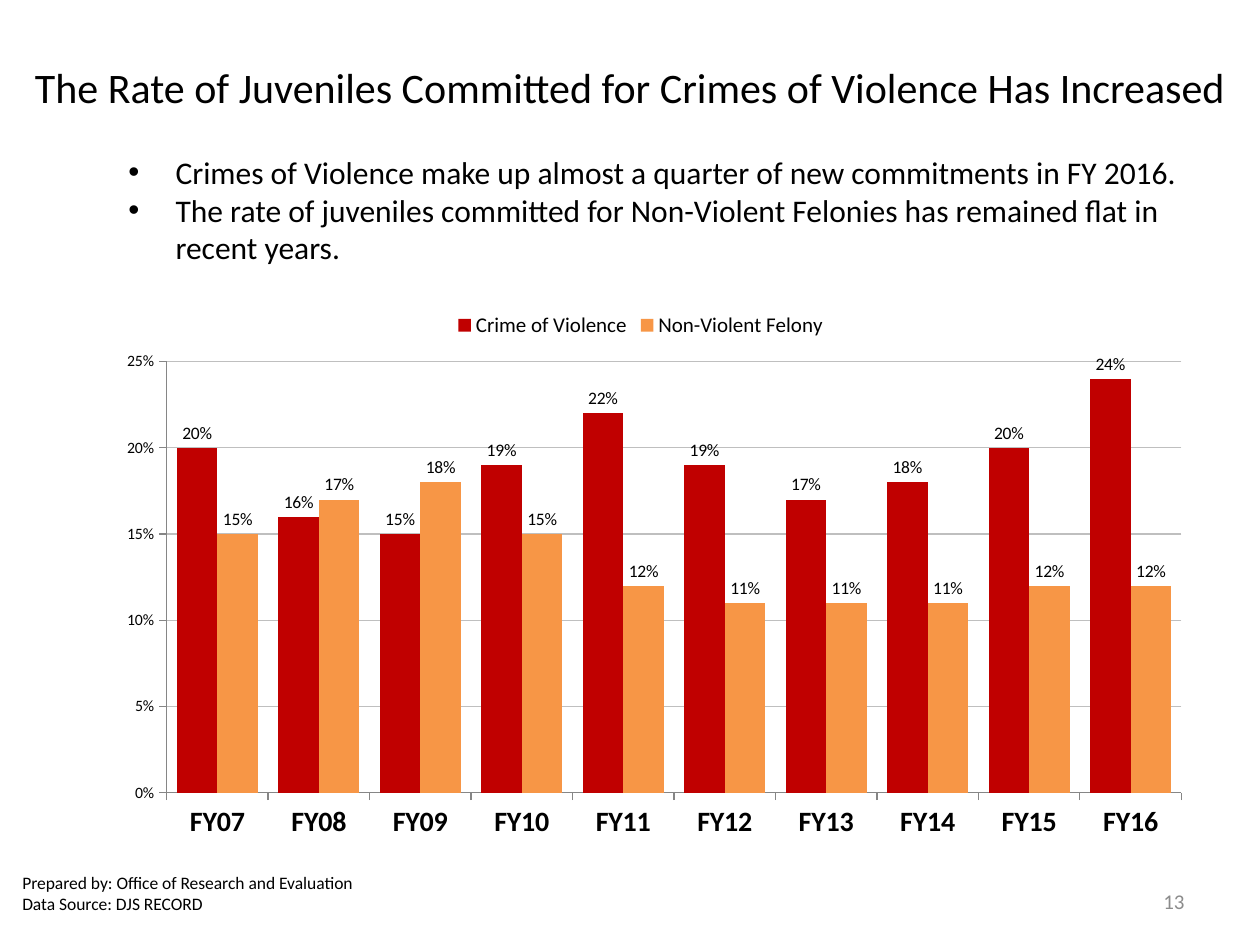
from lxml import etree
from pptx import Presentation
from pptx.chart.data import CategoryChartData
from pptx.dml.color import RGBColor
from pptx.enum.chart import (XL_CHART_TYPE, XL_LABEL_POSITION,
                             XL_LEGEND_POSITION, XL_TICK_MARK)
from pptx.enum.text import MSO_ANCHOR, PP_ALIGN
from pptx.oxml.ns import qn
from pptx.util import Cm, Pt

COLUMN = XL_CHART_TYPE.COLUMN_CLUSTERED
OUT_END = XL_LABEL_POSITION.OUTSIDE_END
TOP = XL_LEGEND_POSITION.TOP
OUT, NONE = XL_TICK_MARK.OUTSIDE, XL_TICK_MARK.NONE
MIDDLE = MSO_ANCHOR.MIDDLE
LEFT, CENTER, RIGHT = PP_ALIGN.LEFT, PP_ALIGN.CENTER, PP_ALIGN.RIGHT

BLACK = RGBColor(0, 0, 0)
GRAY = RGBColor(0x8C, 0x8C, 0x8C)
AXIS = RGBColor(0x86, 0x86, 0x86)
GRID = RGBColor(0xBF, 0xBF, 0xBF)
RED = RGBColor(0xC0, 0, 0)
ORANGE = RGBColor(0xF7, 0x96, 0x46)

YEARS = [f"FY{year:02d}" for year in range(7, 17)]
RATES = [
    ("Crime of Violence", RED,
     [0.20, 0.16, 0.15, 0.19, 0.22, 0.19, 0.17, 0.18, 0.20, 0.24]),
    ("Non-Violent Felony", ORANGE,
     [0.15, 0.17, 0.18, 0.15, 0.12, 0.11, 0.11, 0.11, 0.12, 0.12]),
]
PLOT = {"x": 0.074, "y": 0.112, "w": 0.912, "h": 0.766}


def put(item, **values):
    for name, value in values.items():
        setattr(item, name, value)


class Deck:
    def __init__(self, face):
        self.face = face
        self.prs = Presentation()
        put(self.prs, slide_width=Cm(25.4), slide_height=Cm(19.05))
        self.slide = self.prs.slides.add_slide(self.prs.slide_layouts[6])

    def style(self, font, size, color=BLACK, bold=False):
        put(font, name=self.face, size=Pt(size), bold=bold)
        font.color.rgb = color

    def text(self, box, lines, size, color=BLACK, align=LEFT, bullet=False):
        frame = self.slide.shapes.add_textbox(*map(Cm, box)).text_frame
        put(frame, word_wrap=True, vertical_anchor=MIDDLE)
        for i, line in enumerate(lines):
            para = frame.add_paragraph() if i else frame.paragraphs[0]
            para.alignment = align
            run = para.add_run()
            run.text = line
            self.style(run.font, size, color)
            if bullet:
                self.bullet(para)

    def bullet(self, para):
        props = para._p.get_or_add_pPr()
        props.set("marL", str(Cm(0.95)))
        props.set("indent", str(-Cm(0.95)))
        etree.SubElement(props, qn("a:buFont")).set("typeface", "Arial")
        etree.SubElement(props, qn("a:buChar")).set("char", "•")

    def chart(self, box, cats, rows):
        data = CategoryChartData(number_format="0%")
        data.categories = cats
        for name, _, vals in rows:
            data.add_series(name, vals)
        chart = self.slide.shapes.add_chart(COLUMN, *map(Cm, box), data).chart
        self.style(chart.font, 10)
        put(chart, has_title=False, has_legend=True)
        put(chart.legend, position=TOP, include_in_layout=False)
        self.style(chart.legend.font, 12)
        plot = chart.plots[0]
        put(plot, gap_width=50, overlap=0, vary_by_categories=False)
        for series, (_, color, _) in zip(plot.series, rows):
            series.format.fill.solid()
            series.format.fill.fore_color.rgb = color
            labels = series.data_labels
            put(labels, show_value=True, position=OUT_END,
                number_format="0%", number_format_is_linked=False)
            self.style(labels.font, 10)
        self.axes(chart)
        self.place(chart)

    def axes(self, chart):
        cat, val = chart.category_axis, chart.value_axis
        for axis, size, bold in ((cat, 16, True), (val, 9, False)):
            put(axis, major_tick_mark=OUT, minor_tick_mark=NONE)
            self.style(axis.tick_labels.font, size, bold=bold)
            self.line(axis.format.line, AXIS)
        put(val, minimum_scale=0, maximum_scale=0.25, major_unit=0.05,
            has_major_gridlines=True)
        put(val.tick_labels, number_format="0%", number_format_is_linked=False)
        self.line(val.major_gridlines.format.line, GRID)

    def line(self, line, color):
        line.color.rgb = color
        line.width = Pt(0.75)

    def place(self, chart):
        """Fix the inner plot area as fractions of the chart."""
        area = chart._chartSpace.chart.plotArea
        for old in area.findall(qn("c:layout")):
            area.remove(old)
        layout = etree.Element(qn("c:layout"))
        manual = etree.SubElement(layout, qn("c:manualLayout"))
        values = {"layoutTarget": "inner", "xMode": "edge", "yMode": "edge",
                  **PLOT}
        for name, value in values.items():
            etree.SubElement(manual, qn(f"c:{name}")).set("val", str(value))
        area.insert(0, layout)


def main():
    deck = Deck("Calibri")
    deck.text((0, 0.76, 25.4, 1.98),
              ["The Rate of Juveniles Committed for Crimes of Violence "
               "Has Increased"], 24, align=CENTER)
    deck.text((2.34, 2.74, 22.05, 2.97),
              ["Crimes of Violence make up almost a quarter of new "
               "commitments in FY 2016.",
               "The rate of juveniles committed for Non-Violent Felonies "
               "has remained flat in recent years."], 18, bullet=True)
    deck.text((18.21, 17.65, 5.92, 1.02), ["13"], 12, GRAY, RIGHT)
    deck.text((0.2, 17.35, 7.42, 1.32),
              ["Prepared by: Office of Research and Evaluation",
               "Data Source: DJS RECORD"], 10)
    deck.chart((1.7, 6.02, 22.43, 11.35), YEARS, RATES)
    deck.prs.save("out.pptx")


if __name__ == "__main__":
    main()
